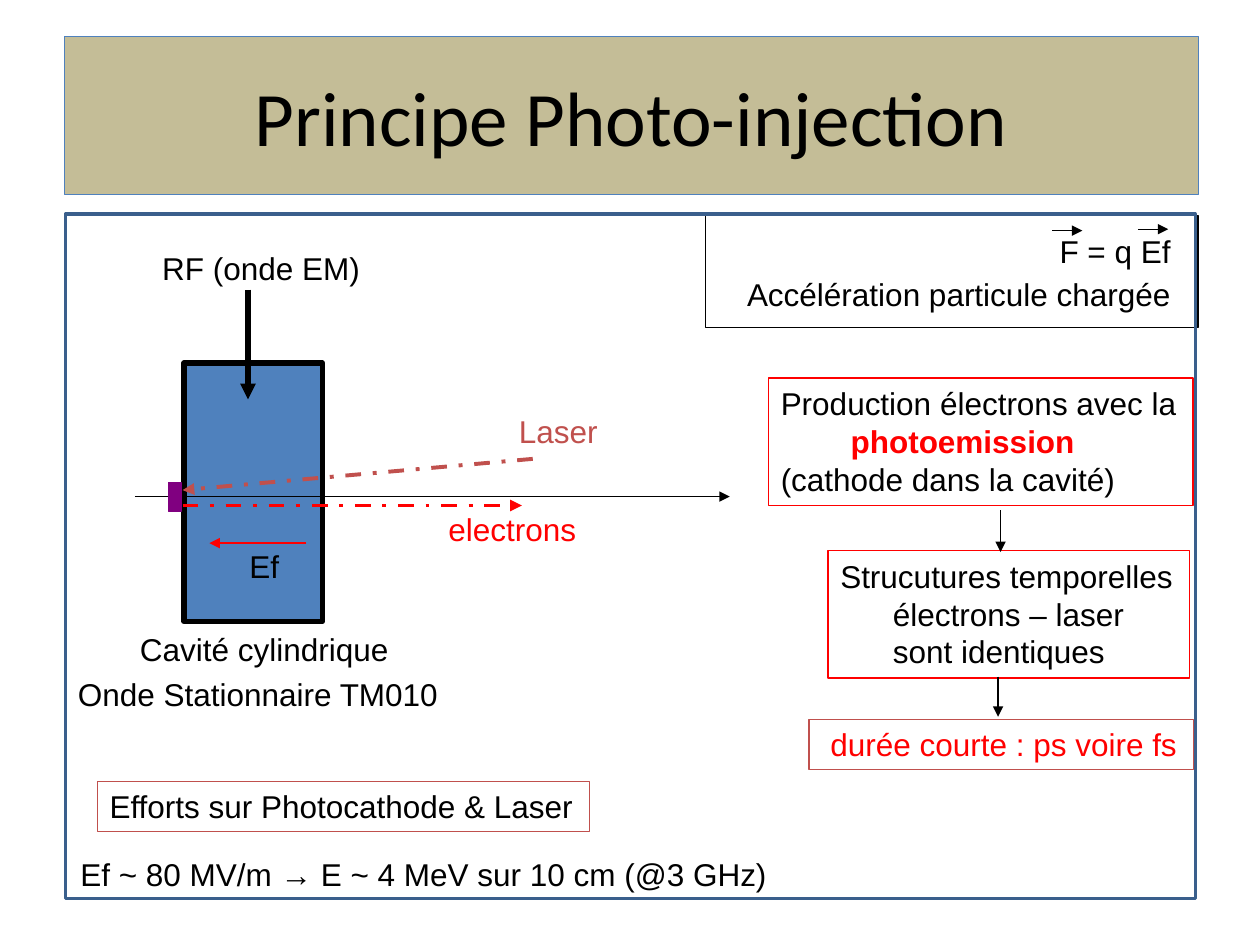
from dataclasses import dataclass

from lxml import etree
from pptx import Presentation
from pptx import util as u
from pptx.dml.color import RGBColor
from pptx.enum import dml, shapes, text
from pptx.oxml.ns import qn


@dataclass(frozen=True)
class Theme:
    black: str = "000000"
    red: str = "FF0000"
    brick: str = "C0504D"
    blue: str = "4F81BD"
    navy: str = "3A5F8C"
    purple: str = "800080"
    sand: str = "C4BD97"
    title_font: str = "Calibri"
    body_font: str = "Arial"
    title_size: int = 44
    body_size: int = 18
    thin: float = 0.75


class Diagram:
    """Holds the style and the current slide, and draws its elements."""

    def __init__(self, slide, theme):
        self.slide, self.theme = slide, theme

    def outline(self, shape, color, width):
        shape.line.color.rgb = RGBColor.from_string(color)
        shape.line.width = u.Pt(width)

    def box(self, left, top, width, height, line, fill=None, weight=None):
        shape = self.slide.shapes.add_shape(
            shapes.MSO_SHAPE.RECTANGLE, *map(u.Cm, (left, top, width, height)))
        shape.shadow.inherit = False
        if fill:
            shape.fill.solid()
            shape.fill.fore_color.rgb = RGBColor.from_string(fill)
        else:
            shape.fill.background()
        self.outline(shape, line, weight or self.theme.thin)
        return shape

    def label(self, left, top, width, *lines, height=1.02, **style):
        shape = self.slide.shapes.add_textbox(
            *map(u.Cm, (left, top, width, height)))
        self.set_lines(shape, *lines, **style)
        return shape

    def set_lines(self, shape, *lines, align=text.PP_ALIGN.LEFT,
                  anchor=text.MSO_ANCHOR.TOP, **style):
        """Each line is a string or a (string, indent in cm, format) tuple."""
        frame = shape.text_frame
        frame_format = {"word_wrap": True, "vertical_anchor": anchor,
                        "margin_right": 0}
        if align == text.PP_ALIGN.CENTER:
            frame_format["margin_left"] = 0
        for name, value in frame_format.items():
            setattr(frame, name, value)
        for index, line in enumerate(lines):
            words, indent, extra = (line, 0, {}) if isinstance(line, str) else line
            paragraph = frame.paragraphs[0] if index == 0 else frame.add_paragraph()
            paragraph.alignment = align
            if indent:
                properties = paragraph._p.get_or_add_pPr()
                properties.set("marL", str(u.Cm(indent)))
                properties.set("indent", "0")
            run = paragraph.add_run()
            run.text = words
            values = {"name": self.theme.body_font, "size": self.theme.body_size,
                      "color": self.theme.black, "bold": False, **style, **extra}
            run.font.color.rgb = RGBColor.from_string(values.pop("color"))
            values["size"] = u.Pt(values["size"])
            for name, value in values.items():
                setattr(run.font, name, value)

    def arrow(self, start, end, color=None, weight=None, dash=None):
        connector = self.slide.shapes.add_connector(
            shapes.MSO_CONNECTOR.STRAIGHT, *map(u.Cm, start + end))
        self.outline(connector, color or self.theme.black,
                     weight or self.theme.thin)
        if dash:
            connector.line.dash_style = dash
        etree.SubElement(connector.line._get_or_add_ln(), qn("a:tailEnd"),
                         type="triangle")
        etree.SubElement(connector._element.spPr, qn("a:effectLst"))


def main():
    presentation = Presentation()
    presentation.slide_width, presentation.slide_height = u.Cm(25.4), u.Cm(19.05)
    slide = presentation.slides.add_slide(presentation.slide_layouts[6])
    theme = Theme()
    diagram = Diagram(slide, theme)
    dash_dot = dml.MSO_LINE.DASH_DOT

    # Title banner
    banner = diagram.box(1.3, 0.74, 22.86, 3.18, theme.blue, theme.sand)
    diagram.set_lines(banner, "Principe Photo-injection", name=theme.title_font,
                      size=theme.title_size, align=text.PP_ALIGN.CENTER,
                      anchor=text.MSO_ANCHOR.MIDDLE)

    # Force equation with its vector arrows
    diagram.box(14.22, 4.34, 9.93, 2.26, theme.black)
    diagram.label(21.11, 4.55, 2.74, "F = q Ef")
    diagram.label(14.81, 5.41, 9.32, "Accélération particule chargée")
    for left, top in ((21.21, 4.65), (22.94, 4.62)):
        diagram.arrow((left, top), (left + 0.61, top))

    # Cavity, beam axis and field
    diagram.box(3.71, 7.32, 2.79, 5.21, theme.black, theme.blue, 3)
    diagram.arrow((2.72, 10.01), (14.71, 10.01))
    diagram.arrow((6.17, 10.95), (4.22, 10.95), theme.red, 1.5)
    diagram.arrow((5, 5.84), (5, 8.05), weight=3)

    # Laser, electrons and photocathode
    diagram.arrow((10.74, 9.25), (3.68, 9.88), theme.brick, 2.25, dash_dot)
    diagram.arrow((3.68, 10.19), (10.52, 10.19), theme.red, 2.25, dash_dot)
    diagram.box(3.4, 9.73, 0.25, 0.58, theme.purple, theme.purple)

    # Labels around the cavity
    for left, top, width, words, color in (
            (4.78, 10.9, 1.12, "Ef", theme.black),
            (3.02, 4.9, 4.55, "RF (onde EM)", theme.black),
            (1.32, 13.49, 8.03, "Onde Stationnaire TM010", theme.black),
            (10.21, 8.18, 2.11, "Laser", theme.brick),
            (8.79, 10.16, 3.1, "electrons", theme.red),
            (2.57, 12.57, 5.56, "Cavité cylindrique", theme.black),
            (1.37, 17.12, 14.66,
             "Ef ~ 80 MV/m → E ~ 4 MeV sur 10 cm (@3 GHz)", theme.black)):
        diagram.label(left, top, width, words, color=color)

    # Framed statements
    for left, top, width, height, line, lines in (
            (15.49, 7.62, 8.56, 2.57, theme.red,
             ("Production électrons avec la",
              ("photoemission", 1.41, {"color": theme.red, "bold": True}),
              "(cathode dans la cavité)")),
            (16.69, 11.1, 7.29, 2.57, theme.red,
             ("Strucutures temporelles",
              ("électrons – laser", 1.06, {}),
              ("sont identiques", 1.06, {}))),
            (16.31, 14.5, 7.75, 1.02, theme.brick,
             (("durée courte : ps voire fs", 0.18, {"color": theme.red}),)),
            (1.96, 15.75, 9.93, 1.02, theme.brick,
             ("Efforts sur Photocathode & Laser",))):
        statement = diagram.box(left, top, width, height, line)
        diagram.set_lines(statement, *lines)

    # Links between the statements
    diagram.arrow((20.17, 10.29), (20.17, 11.13))
    diagram.arrow((20.12, 13.64), (20.12, 14.45))

    # Content frame
    diagram.box(1.32, 4.32, 22.78, 13.79, theme.navy, weight=2)

    presentation.save("out.pptx")


if __name__ == "__main__":
    main()
